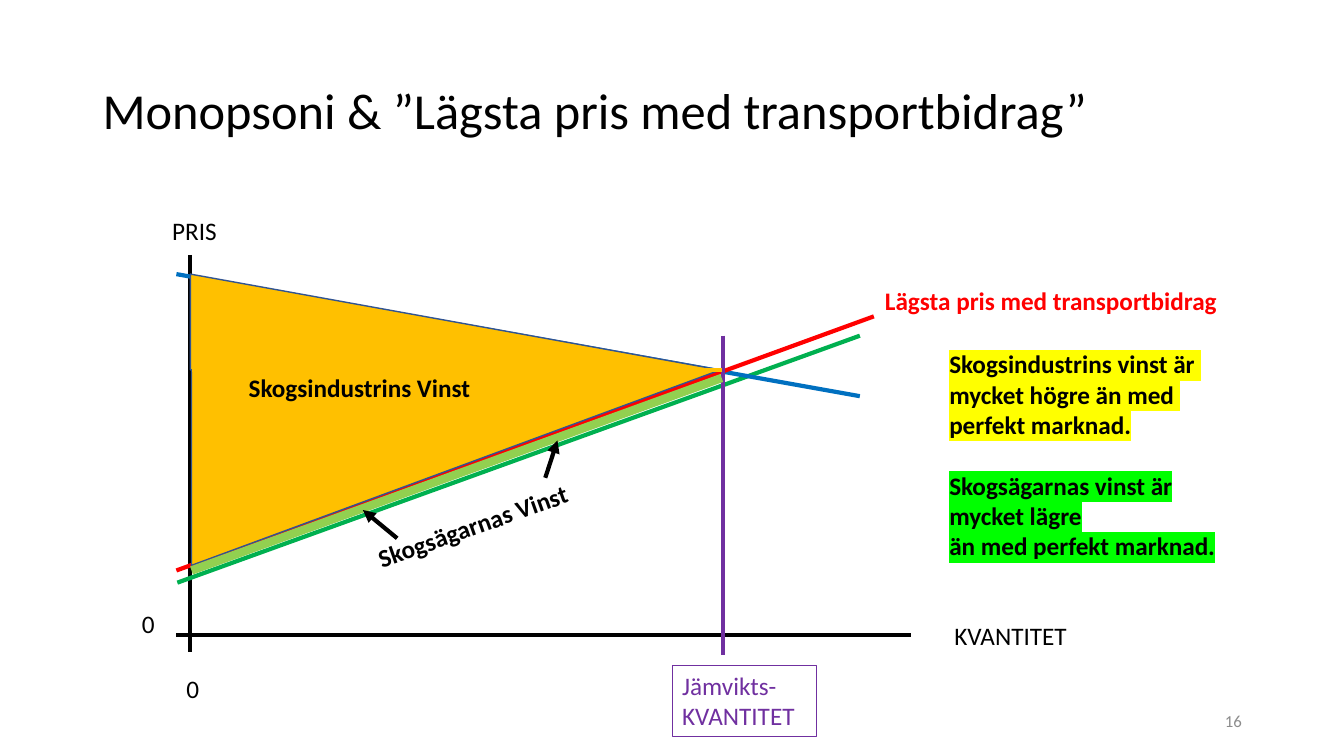
import pptx
import pptx.util
import pptx.dml.color
import pptx.enum.shapes
import pptx.enum.text
import pptx.oxml
import pptx.oxml.ns

Pt = pptx.util.Pt
KIND = pptx.enum.shapes.MSO_SHAPE
ALIGN = pptx.enum.text.PP_ALIGN
ANCHOR = pptx.enum.text.MSO_ANCHOR
qn = pptx.oxml.ns.qn

BLACK, RED, PURPLE, GOLD = "000000", "FF0000", "7030A0", "FFC000"
YELLOW, LIME = "FFFF00", "00FF00"
ZERO, QTY, PRICE = 136.8, 515.5, 264.2

CURVES = [
    ((136, 182), (136, 466), BLACK, 3),
    ((126, 453.6), (651, 453.6), BLACK, 3),
    ((126.7, 416.2), (614.2, 239.8), "00B050", 3),
    ((126, 195.8), (614.2, 283), "0070C0", 3),
    ((126, 407.5), (624.2, 226), RED, 3),
    ((516.2, 239.8), (516.2, 468), PURPLE, 3),
]
AREAS = [
    (136, 195.8, 378, 68.4, False),
    (ZERO, PRICE, 378, 139.7, True),
]
BANDS = [
    ((ZERO, 407.5), (QTY, 270), "92D050", 6),
    ((ZERO, PRICE), (QTY, PRICE), GOLD, 3),
]
ARROWS = [
    ((389.5, 341.3), (398.2, 314.6), BLACK, 3),
    ((283.7, 384.5), (259.2, 364.3), BLACK, 3),
]
TEXTS = [
    ("Monopsoni & ”Lägsta pris med transportbidrag”", (66.2, 28.8, 860.4, 104.4),
     {"size": 36, "mid": True, "lead": 0.9}),
    ("16", (678.2, 500.4, 216, 28.8),
     {"size": 12, "mid": True, "color": "8C8C8C", "align": ALIGN.RIGHT}),
    ("PRIS", (115.9, 150.5, 46.8, 28.8), {"wrap": False}),
    ("KVANTITET", (674.6, 439.2, 95.8, 28.8), {"wrap": False}),
    ("0", (126, 477.4, 23.8, 28.8), {"wrap": False}),
    ("0", (94.3, 431.3, 24.5, 28.8), {}),
    ("Jämvikts-KVANTITET", (480.2, 475.2, 103, 51.1),
     {"color": PURPLE, "frame": PURPLE}),
    ("Lägsta pris med transportbidrag", (625, 200.2, 262.1, 28.8),
     {"color": RED, "bold": True}),
    ("Skogsindustrins Vinst", (170.6, 262.1, 177.8, 28.8), {"bold": True}),
    ("Skogsägarnas Vinst", (259.2, 360, 163.4, 28.8), {"bold": True, "turn": 340.4}),
]
NOTES = [
    ("Skogsindustrins vinst är ", YELLOW, 0),
    ("mycket högre än med ", YELLOW, 0),
    ("perfekt marknad.", YELLOW, 0),
    ("Skogsägarnas vinst är mycket lägre", LIME, 22),
    ("än med perfekt marknad.", LIME, 0),
]
NOTEBOX = (671, 245.5, 223.2, 181.4)


def rgb(code):
    return pptx.dml.color.RGBColor.from_string(code)


def put(obj, vals):
    for key, val in vals.items():
        setattr(obj, key, val)


def stroke(item, color, width):
    item.line.color.rgb = rgb(color)
    item.line.width = Pt(width)


def draw(slide, start, end, color, width, arrow=False):
    line = slide.shapes.add_connector(
        pptx.enum.shapes.MSO_CONNECTOR.STRAIGHT, *map(Pt, start + end))
    stroke(line, color, width)
    props = line._element.spPr
    if arrow:
        pptx.oxml.ns
        tip = props.find(qn("a:ln")).makeelement(qn("a:tailEnd"), {"type": "triangle"})
        props.find(qn("a:ln")).append(tip)
    props.append(props.makeelement(qn("a:effectLst"), {}))


def wedge(slide, left, top, width, height, flip):
    area = slide.shapes.add_shape(
        KIND.ISOSCELES_TRIANGLE, *map(Pt, (left, top, width, height)))
    area.adjustments[0] = 0
    area.shadow.inherit = False
    area.fill.solid()
    area.fill.fore_color.rgb = rgb(GOLD)
    stroke(area, "325491", 1)
    if flip:
        area._element.spPr.find(qn("a:xfrm")).set("flipV", "1")


def write(para, text, size=18, color=BLACK, bold=False, mark=None):
    run = para.add_run()
    run.text = text
    put(run.font, {"name": "Calibri", "size": Pt(size), "bold": bold})
    run.font.color.rgb = rgb(color)
    if mark:
        props = run.font._element
        glow = props.makeelement(qn("a:highlight"), {})
        glow.append(glow.makeelement(qn("a:srgbClr"), {"val": mark}))
        props.find(qn("a:solidFill")).addnext(glow)


def label(slide, text, spot, wrap=True, mid=False, lead=None, align=ALIGN.LEFT,
          frame=None, turn=0, **font):
    box = slide.shapes.add_textbox(*map(Pt, spot))
    box.rotation = turn
    if frame:
        stroke(box, frame, 0.75)
    put(box.text_frame, {
        "word_wrap": wrap,
        "vertical_anchor": ANCHOR.MIDDLE if mid else ANCHOR.TOP,
    })
    para = box.text_frame.paragraphs[0]
    put(para, {"alignment": align, "line_spacing": lead})
    write(para, text, **font)


def remark(slide):
    frame = slide.shapes.add_textbox(*map(Pt, NOTEBOX)).text_frame
    frame.word_wrap = True
    for num, (text, mark, gap) in enumerate(NOTES):
        para = frame.add_paragraph() if num else frame.paragraphs[0]
        para.space_before = Pt(gap)
        write(para, text, bold=True, mark=mark)


def main():
    deck = pptx.Presentation()
    put(deck, {"slide_width": Pt(960), "slide_height": Pt(540)})
    slide = deck.slides.add_slide(deck.slide_layouts[6])
    for curve in CURVES:
        draw(slide, *curve)
    for area in AREAS:
        wedge(slide, *area)
    for band in BANDS:
        draw(slide, *band)
    for text, spot, style in TEXTS:
        label(slide, text, spot, **style)
    for arrow in ARROWS:
        draw(slide, *arrow, arrow=True)
    remark(slide)
    deck.save("out.pptx")


if __name__ == "__main__":
    main()
